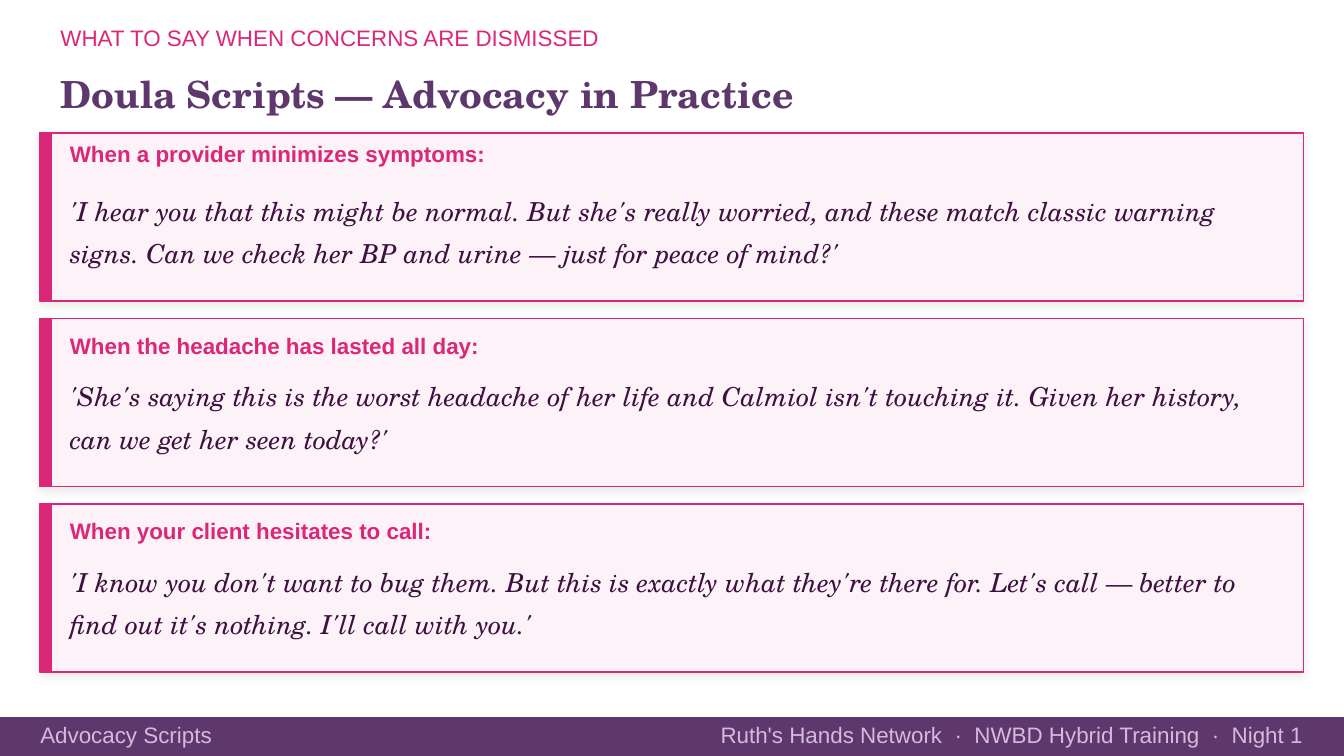
"""Build the advocacy scripts slide: a heading, three quote cards and a footer."""
import lxml.etree
import pptx
import pptx.dml.color
import pptx.enum.shapes
import pptx.enum.text
import pptx.oxml.ns
import pptx.util

WIDTH = 10
HEIGHT = WIDTH * 9 / 16
MARGIN = 0.03 * WIDTH
CARD_TOP, CARD_HEIGHT, CARD_PITCH = 0.99, 1.25, 1.38
COLORS = {
    "pink": "DB2777",
    "blush": "FDF2F8",
    "purple": "5E376C",
    "ink": "3D1040",
    "lilac": "D4BADD",
    "shadow": "000000",
}
SANS, SERIF = "Arial", "TeX Gyre Schola"
FORMATS = {
    "kicker": {"name": SANS, "size": 12, "color": "pink"},
    "title": {"name": SERIF, "size": 20, "color": "purple", "bold": True, "spacing": 1.1},
    "label": {"name": SANS, "size": 12, "color": "pink", "bold": True},
    "quote": {"name": SERIF, "size": 14, "color": "ink", "italic": True, "spacing": 1.35},
    "footer": {"name": SANS, "size": 12, "color": "lilac"},
}
CARDS = [
    (0.05, "When a provider minimizes symptoms:",
     "'I hear you that this might be normal. But she's really worried, and these match "
     "classic warning signs. Can we check her BP and urine — just for peace of mind?'"),
    (0.1, "When the headache has lasted all day:",
     "'She's saying this is the worst headache of her life and Calmiol isn't touching it. "
     "Given her history, can we get her seen today?'"),
    (0.1, "When your client hesitates to call:",
     "'I know you don't want to bug them. But this is exactly what they're there for. "
     "Let's call — better to find out it's nothing. I'll call with you.'"),
]


def rgb(name):
    """Return the named colour."""
    return pptx.dml.color.RGBColor.from_string(COLORS[name])


def inches(*lengths):
    """Convert lengths in inches to slide units."""
    return [pptx.util.Inches(length) for length in lengths]


def write_text(box, text, style, align="LEFT"):
    """Fill a box with one formatted paragraph."""
    look = dict(FORMATS[style])
    color, spacing = look.pop("color"), look.pop("spacing", None)
    look["size"] = pptx.util.Pt(look["size"])
    frame = box.text_frame
    frame_format = {
        "word_wrap": True,
        "auto_size": pptx.enum.text.MSO_AUTO_SIZE.NONE,
        "vertical_anchor": pptx.enum.text.MSO_ANCHOR.TOP,
        "margin_left": 0, "margin_right": 0, "margin_top": 0, "margin_bottom": 0,
    }
    for key, value in frame_format.items():
        setattr(frame, key, value)
    para = frame.paragraphs[0]
    para.alignment = pptx.enum.text.PP_ALIGN[align]
    para.line_spacing = spacing
    span = para.add_run()
    span.text = text
    span.font.color.rgb = rgb(color)
    for key, value in look.items():
        setattr(span.font, key, value)


def add_text(page, place, text, style, align="LEFT"):
    """Add a text box."""
    write_text(page.shapes.add_textbox(*inches(*place)), text, style, align)


def add_title(page, place, text):
    """Move and fill the title placeholder."""
    title = page.shapes.title
    for key, value in zip(("left", "top", "width", "height"), inches(*place)):
        setattr(title, key, value)
    write_text(title, text, "title")


def add_panel(page, place, fill, line):
    """Add a filled and outlined rectangle."""
    panel = page.shapes.add_shape(pptx.enum.shapes.MSO_SHAPE.RECTANGLE, *inches(*place))
    panel.shadow.inherit = False
    panel.fill.solid()
    panel.fill.fore_color.rgb = rgb(fill)
    panel.line.color.rgb = rgb(line)
    panel.line.width = pptx.util.Pt(1)
    return panel


def add_soft_shadow(panel):
    """Give a panel a faint outer shadow."""
    qn = pptx.oxml.ns.qn
    effects = panel._element.spPr.find(qn("a:effectLst"))
    shadow = lxml.etree.SubElement(
        effects, qn("a:outerShdw"), blurRad=str(pptx.util.Pt(5)), dist=str(pptx.util.Pt(2)),
        dir=str(135 * 60000), algn="bl", rotWithShape="0")
    tint = lxml.etree.SubElement(shadow, qn("a:srgbClr"), val=COLORS["shadow"])
    lxml.etree.SubElement(tint, qn("a:alpha"), val="8000")


def add_card(page, top, label_offset, label, quote):
    """Add a card with an accent bar, a label and a quote."""
    card = add_panel(page, (MARGIN, top, WIDTH - 2 * MARGIN, CARD_HEIGHT), "blush", "pink")
    add_soft_shadow(card)
    add_panel(page, (MARGIN, top, 0.08, CARD_HEIGHT), "pink", "pink")
    left, width = MARGIN + 0.22, 0.9 * WIDTH
    add_text(page, (left, top + label_offset, width, 0.26), label, "label")
    add_text(page, (left, top + 0.38, width, 0.78), quote, "quote")


def add_footer(page, left_text, right_text):
    """Add the footer band with its two texts."""
    band = 0.28
    top = HEIGHT - band
    add_panel(page, (0, top, WIDTH, band), "purple", "purple")
    add_text(page, (MARGIN, top + 0.02, 0.55 * WIDTH, 0.25), left_text, "footer")
    add_text(page, (0, top + 0.02, WIDTH - MARGIN, 0.25), right_text, "footer", "RIGHT")


def main():
    """Build and save the deck."""
    deck = pptx.Presentation()
    deck.slide_width, deck.slide_height = inches(WIDTH, HEIGHT)
    page = deck.slides.add_slide(deck.slide_layouts.get_by_name("Title Only"))
    add_text(page, (0.45, 0.18, 9.1, 0.22), "WHAT TO SAY WHEN CONCERNS ARE DISMISSED", "kicker")
    add_title(page, (0.45, 0.5, 9.1, 0.72), "Doula Scripts — Advocacy in Practice")
    for row, card in enumerate(CARDS):
        add_card(page, CARD_TOP + row * CARD_PITCH, *card)
    add_footer(page, "Advocacy Scripts",
               "Ruth's Hands Network  ·  NWBD Hybrid Training  ·  Night 1")
    deck.save("out.pptx")


if __name__ == "__main__":
    main()
